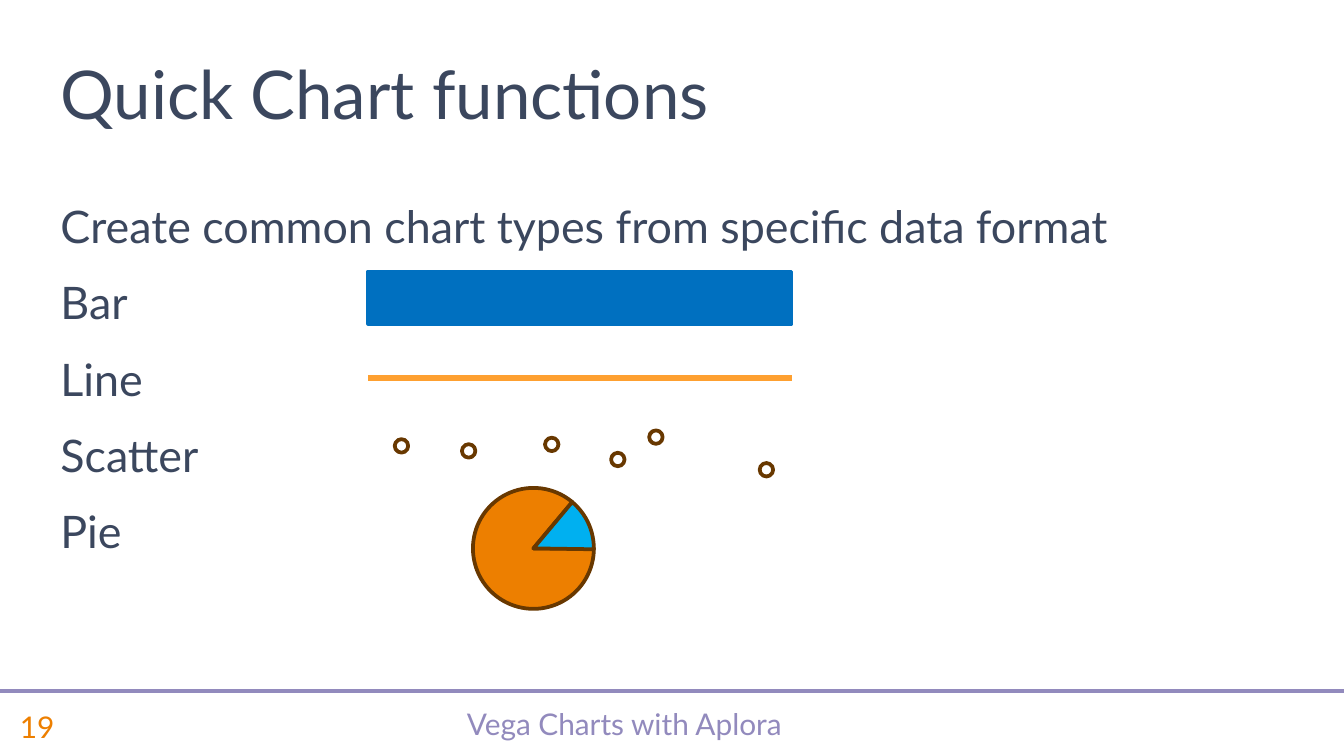
from pptx import Presentation
from pptx.dml.color import RGBColor
from pptx.enum.shapes import MSO_CONNECTOR, MSO_SHAPE
from pptx.enum.text import MSO_ANCHOR as ANCHOR, MSO_AUTO_SIZE, PP_ALIGN as ALIGN
from pptx.oxml.ns import qn
from pptx.util import Pt
from lxml.etree import SubElement

FONT = "Lato"
INK, PURPLE, ORANGE = "3B475E", "928ABD", "ED7F00"
BLUE, SKY, AMBER, BROWN = "0070C0", "00B0F0", "FEA030", "683800"


def rgb(value):
    return RGBColor.from_string(value)


class Deck:
    def __init__(self, width, height):
        self.prs = Presentation()
        self.prs.slide_width, self.prs.slide_height = Pt(width), Pt(height)

    def new_slide(self):
        self.s = self.prs.slides.add_slide(self.prs.slide_layouts[1])

    def fill_text(self, tf, lines, size, color, anchor, align=ALIGN.LEFT, after=0, spacing=1.0):
        tf.word_wrap = True
        tf.auto_size = MSO_AUTO_SIZE.NONE
        tf.vertical_anchor = anchor
        tf.text = "\n".join(lines)
        for p in tf.paragraphs:
            p.alignment = align
            p.line_spacing = spacing
            p.space_before, p.space_after = Pt(0), Pt(after)
            for r in p.runs:
                r.font.name, r.font.size = FONT, Pt(size)
                r.font.color.rgb = rgb(color)

    def place(self, sp, x, y, w, h):
        sp.left, sp.top, sp.width, sp.height = Pt(x), Pt(y), Pt(w), Pt(h)

    def title(self, text, box):
        sp = self.s.shapes.title
        self.place(sp, *box)
        self.fill_text(sp.text_frame, [text], 36, INK, ANCHOR.BOTTOM)

    def body(self, lines, box):
        sp = self.s.placeholders[1]
        self.place(sp, *box)
        self.fill_text(sp.text_frame, lines, 24, INK, ANCHOR.TOP, after=12)
        for p in sp.text_frame.paragraphs:
            pPr = p._p.get_or_add_pPr()
            pPr.set("marL", "0")
            pPr.set("indent", "0")
            SubElement(pPr, qn("a:buNone"))

    def text(self, text, box, color, align=ALIGN.LEFT, spacing=1.0):
        sp = self.s.shapes.add_textbox(*map(Pt, box))
        self.fill_text(sp.text_frame, [text], 16, color, ANCHOR.MIDDLE, align, spacing=spacing)

    def shape(self, kind, box, line, fill=None):
        sp = self.s.shapes.add_shape(kind, *map(Pt, box))
        sp.shadow.inherit = False
        if fill:
            sp.fill.solid()
            sp.fill.fore_color.rgb = rgb(fill)
        else:
            sp.fill.background()
        sp.line.color.rgb = rgb(line)
        sp.line.width = Pt(2)
        return sp

    def pie(self, box, start, end, fill):
        sp = self.shape(MSO_SHAPE.PIE, box, BROWN, fill)
        for i, degrees in enumerate((start, end)):
            sp.adjustments[i] = degrees * 0.6

    def line(self, x1, x2, y, color, width):
        c = self.s.shapes.add_connector(MSO_CONNECTOR.STRAIGHT, Pt(x1), Pt(y), Pt(x2), Pt(y))
        c.line.color.rgb = rgb(color)
        c.line.width = Pt(width)
        SubElement(c._element.spPr, qn("a:effectLst"))


def main():
    deck = Deck(720, 405)
    deck.new_slide()
    deck.title("Quick Chart functions", (25.2, 20.9, 551.5, 54))
    deck.body(
        ["Create common chart types from specific data format", "Bar", "Line", "Scatter", "Pie"],
        (25.2, 103, 669.6, 255.6),
    )

    deck.line(0, 720, 370, PURPLE, 2.25)
    deck.text("Vega Charts with Aplora", (56.2, 373.5, 556.6, 31.5), PURPLE, ALIGN.CENTER, 0.8)
    deck.text("19", (3.6, 373.5, 52.6, 31.5), ORANGE)

    left, right = 197.3, 424.1
    deck.shape(MSO_SHAPE.RECTANGLE, (left, 145.4, right - left, 28.1), BLUE, BLUE)
    deck.line(left, right, 202.4, AMBER, 3)

    dot = 7.2
    for x, y in [(211.5, 235.3), (247.5, 238), (292, 234.5), (327.4, 242.6), (347.8, 230.6), (407, 248.1)]:
        deck.shape(MSO_SHAPE.OVAL, (x, y, dot, dot), BROWN)

    disc = (253.4, 261.4, 64.8, 64.8)
    deck.pie(disc, 0, 310, ORANGE)
    deck.pie(disc, 310, 0.86, SKY)

    deck.prs.save("out.pptx")


if __name__ == "__main__":
    main()
